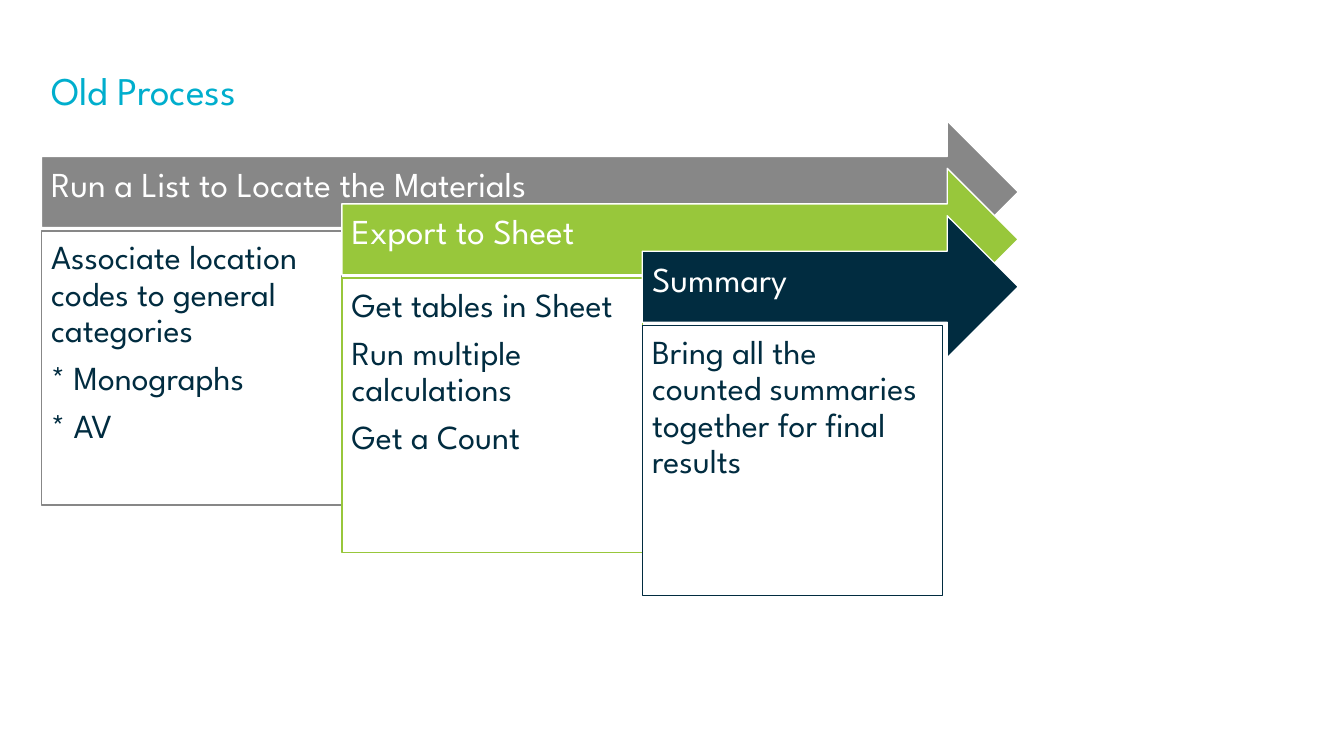
from dataclasses import dataclass

from pptx import Presentation
from pptx.dml.color import RGBColor
from pptx.enum.shapes import MSO_SHAPE as Shape
from pptx.enum.text import MSO_ANCHOR as Anchor, PP_ALIGN as Align
from pptx.util import Inches, Pt


@dataclass(frozen=True)
class Theme:
    font: str = "League Spartan"
    white: str = "FFFFFF"
    cyan: str = "00AECD"
    gray: str = "878787"
    green: str = "98C73B"
    navy: str = "012C40"
    title_size: float = 28
    step_size: float = 25
    detail_size: float = 24
    line_spacing: float = 0.9
    space_share: float = 0.35


THEME = Theme()
LEFT = 0.41
TOP = 1.2
ARROW_RIGHT = 10.1
ARROW_HEIGHT = 1.41
COLUMN_WIDTH = 2.98
STEP_DROP = 0.47
DETAIL_OFFSET = 1.09

STEPS = [
    ("Run a List to Locate the Materials", THEME.gray, 2.72,
     ["Associate location codes to general categories", "* Monographs", "* AV"]),
    ("Export to Sheet", THEME.green, 2.72,
     ["Get tables in Sheet", "Run multiple calculations", "Get a Count"]),
    ("Summary", THEME.navy, 2.68,
     ["Bring all the counted summaries together for final results"]),
]


def write_text(shape, lines, size, color, anchor, space_after=0):
    frame = shape.text_frame
    frame.text = "\n".join(lines)
    frame.word_wrap = True
    frame.vertical_anchor = anchor
    for paragraph in frame.paragraphs:
        paragraph.alignment = Align.LEFT
        paragraph.line_spacing = THEME.line_spacing
        paragraph.space_before = Pt(0)
        paragraph.space_after = Pt(space_after)
        for run in paragraph.runs:
            run.font.name = THEME.font
            run.font.size = Pt(size)
            run.font.color.rgb = RGBColor.from_string(color)


def set_margins(shape, right, bottom):
    frame = shape.text_frame
    frame.margin_left = frame.margin_top = Inches(0.1)
    frame.margin_right = Inches(right)
    frame.margin_bottom = Inches(bottom)


def add_block(slide, kind, left, top, width, height, fill, line):
    shape = slide.shapes.add_shape(
        kind, Inches(left), Inches(top), Inches(width), Inches(height))
    shape.shadow.inherit = False
    shape.fill.solid()
    shape.fill.fore_color.rgb = RGBColor.from_string(fill)
    shape.line.color.rgb = RGBColor.from_string(line)
    shape.line.width = Pt(1)
    return shape


def add_title(slide, text):
    title = slide.shapes.title
    title.left, title.top = Inches(LEFT), Inches(0.55)
    title.width, title.height = Inches(11.5), Inches(0.74)
    write_text(title, [text], THEME.title_size, THEME.cyan, Anchor.MIDDLE)


def add_arrow(slide, left, top, label, color):
    arrow = add_block(slide, Shape.RIGHT_ARROW, left, top,
                      ARROW_RIGHT - left, ARROW_HEIGHT, color, THEME.white)
    set_margins(arrow, 0.28, 0.22)
    write_text(arrow, [label], THEME.step_size, THEME.white, Anchor.MIDDLE)


def add_details(slide, left, top, height, lines, color):
    box = add_block(slide, Shape.RECTANGLE, left, top,
                    COLUMN_WIDTH, height, THEME.white, color)
    set_margins(box, 0.1, 0.1)
    write_text(box, lines, THEME.detail_size, THEME.navy, Anchor.TOP,
               THEME.detail_size * THEME.space_share)


def main():
    presentation = Presentation()
    presentation.slide_width = Inches(13.33)
    presentation.slide_height = Inches(7.5)
    slide = presentation.slides.add_slide(presentation.slide_layouts[5])
    add_title(slide, "Old Process")
    for index, (label, color, height, details) in enumerate(STEPS):
        left = LEFT + index * COLUMN_WIDTH
        top = TOP + index * STEP_DROP
        add_arrow(slide, left, top, label, color)
        add_details(slide, left, top + DETAIL_OFFSET, height, details, color)
    presentation.save("out.pptx")


if __name__ == "__main__":
    main()
